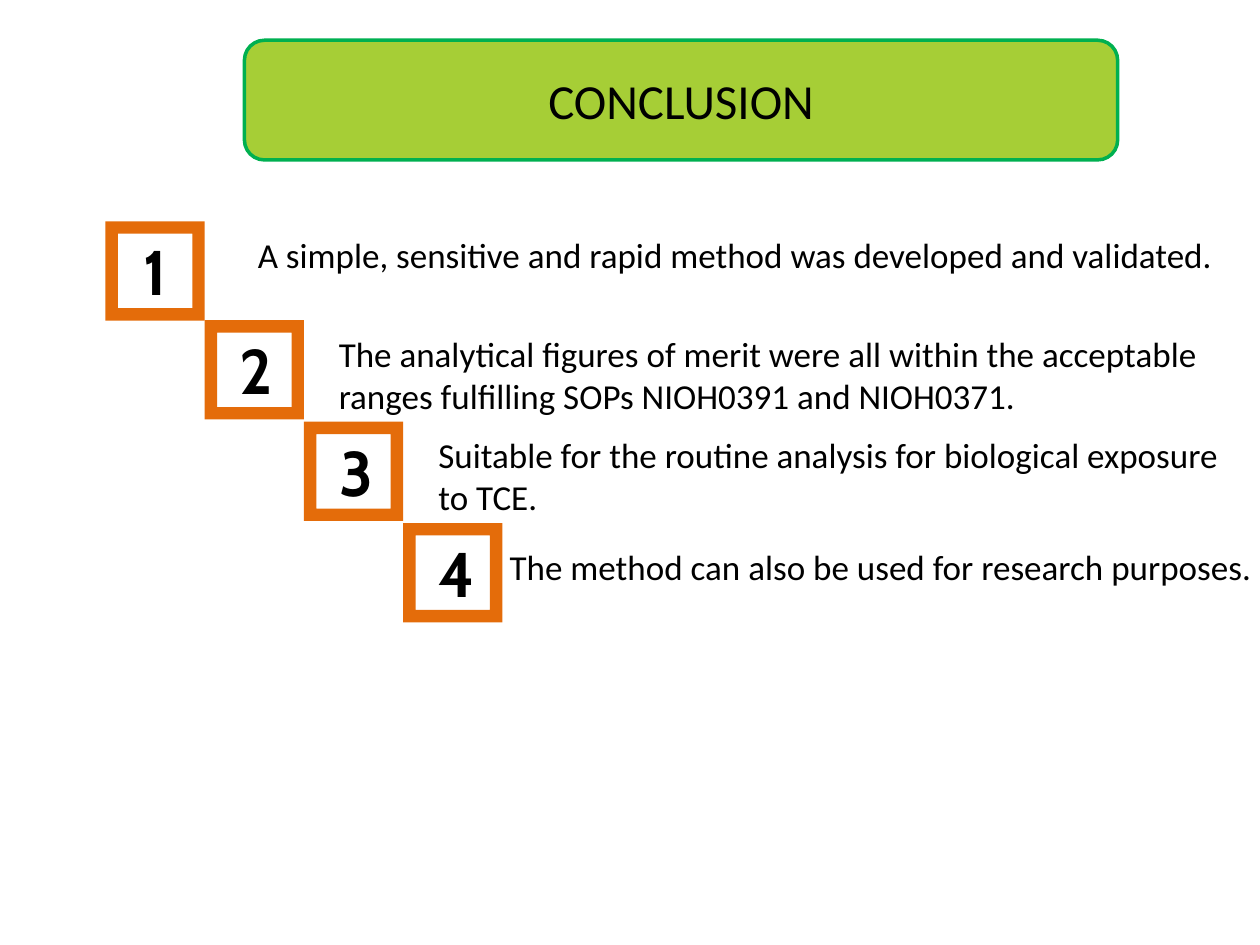
from dataclasses import dataclass

from pptx import Presentation
from pptx.dml.color import RGBColor
from pptx.enum.shapes import MSO_SHAPE
from pptx.enum.text import MSO_ANCHOR, PP_ALIGN
from pptx.util import Pt

SIDE = 56.7  # frame size, also the step to the right
LEFT = 60.3
BLACK = "000000"


@dataclass
class Step:
    text: str
    top: float
    box: tuple[float, float, float, float]
    align: PP_ALIGN = PP_ALIGN.LEFT


STEPS = [
    Step("A simple, sensitive and rapid method was developed and validated.",
         126.5, (130.3, 129.6, 579.5, 31.5), PP_ALIGN.CENTER),
    Step("The analytical figures of merit were all within the acceptable "
         "ranges fulfilling SOPs NIOH0391 and NIOH0371.",
         183, (186.5, 186.5, 533.5, 55.5)),
    Step("Suitable for the routine analysis for biological exposure to TCE.",
         241, (243.4, 244.1, 476.6, 80)),
    Step("The method can also be used for research purposes.",
         298.9, (281.5, 308.2, 443.5, 31.5), PP_ALIGN.CENTER),
]


def color(code: str) -> RGBColor:
    return RGBColor.from_string(code)


def write(shape, text: str, *, size: float, font: str = "Calibri",
          bold: bool = False, align: PP_ALIGN = PP_ALIGN.LEFT,
          anchor: MSO_ANCHOR = MSO_ANCHOR.TOP, wrap: bool = True) -> None:
    frame = shape.text_frame
    frame.word_wrap = wrap
    frame.vertical_anchor = anchor
    para = frame.paragraphs[0]
    para.alignment = align
    run = para.add_run()
    run.text = text
    run.font.size = Pt(size)
    run.font.name = font
    run.font.bold = bold
    run.font.color.rgb = color(BLACK)


def add_form(slide, kind: MSO_SHAPE, box: tuple, fill: str):
    """Add a filled preset shape without line or shadow."""
    shape = slide.shapes.add_shape(kind, *map(Pt, box))
    shape.shadow.inherit = False
    shape.fill.solid()
    shape.fill.fore_color.rgb = color(fill)
    shape.line.fill.background()
    return shape


def add_title(slide, text: str) -> None:
    box = (139.7, 23, 499, 68.4)
    panel = add_form(slide, MSO_SHAPE.ROUNDED_RECTANGLE, box, "A6CE36")
    panel.line.color.rgb = color("00B050")
    panel.line.width = Pt(2)
    title = slide.shapes.title
    title.left, title.top, title.width, title.height = map(Pt, box)
    write(title, text, size=28, align=PP_ALIGN.CENTER,
          anchor=MSO_ANCHOR.MIDDLE)
    panel.element.addnext(title.element)  # text in front of its panel


def add_step(slide, index: int, step: Step) -> None:
    left = LEFT + index * SIDE
    number = slide.shapes.add_textbox(
        Pt(left + 13), Pt(step.top + 3), Pt(30.2), Pt(51))
    write(number, str(index + 1), size=36, font="Cabin", bold=True,
          align=PP_ALIGN.CENTER, wrap=False)
    body = slide.shapes.add_textbox(*map(Pt, step.box))
    write(body, step.text, size=20, align=step.align)
    add_form(slide, MSO_SHAPE.FRAME, (left, step.top, SIDE, SIDE), "E46C0A")


def main() -> None:
    deck = Presentation()
    deck.slide_width, deck.slide_height = Pt(720), Pt(540)
    slide = deck.slides.add_slide(deck.slide_layouts[5])
    for index, step in enumerate(STEPS):
        add_step(slide, index, step)
    add_title(slide, "CONCLUSION")
    deck.save("out.pptx")


if __name__ == "__main__":
    main()
